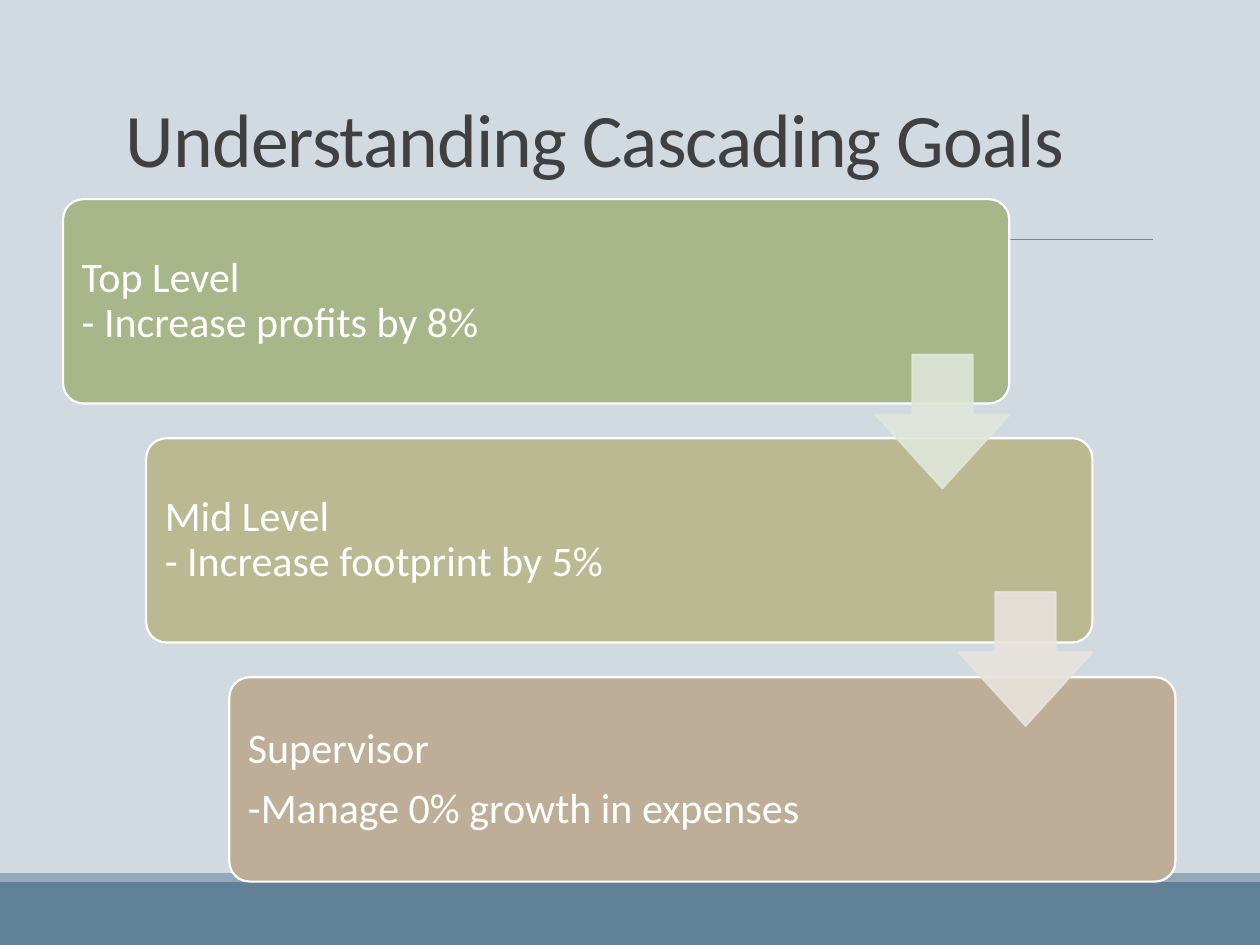
"""Build the cascading goals slide."""
from dataclasses import dataclass

from lxml import etree
from pptx import Presentation
from pptx.dml.color import RGBColor
from pptx.enum.shapes import MSO_CONNECTOR, MSO_SHAPE
from pptx.enum.text import MSO_ANCHOR
from pptx.oxml.ns import qn
from pptx.shapes.autoshape import Shape
from pptx.slide import Slide
from pptx.util import Pt

RECT = MSO_SHAPE.RECTANGLE
ROUND = MSO_SHAPE.ROUNDED_RECTANGLE
DOWN = MSO_SHAPE.DOWN_ARROW
LINE = MSO_CONNECTOR.STRAIGHT
MIDDLE = MSO_ANCHOR.MIDDLE
BOTTOM = MSO_ANCHOR.BOTTOM

PALE = RGBColor(0xD1, 0xD9, 0xE1)
BLUE = RGBColor(0x61, 0x81, 0x97)
MIST = RGBColor(0x92, 0xA9, 0xB9)
GRAY = RGBColor(0x80, 0x80, 0x80)
DARK = RGBColor(0x40, 0x40, 0x40)
WHITE = RGBColor(0xFF, 0xFF, 0xFF)
GREEN = RGBColor(0xA7, 0xB7, 0x89)
OLIVE = RGBColor(0xBA, 0xB9, 0x91)
TAN = RGBColor(0xBE, 0xAE, 0x98)
SAGE = RGBColor(0xE1, 0xE6, 0xDA)
SAND = RGBColor(0xE8, 0xE3, 0xDD)

FONT = "Calibri"
STEP = 47.5


@dataclass(frozen=True)
class Box:
    left: float
    top: float
    width: float
    height: float

    def shift(self, right: float, down: float) -> "Box":
        return Box(self.left + right, self.top + down, self.width, self.height)

    def points(self) -> tuple[Pt, Pt, Pt, Pt]:
        return Pt(self.left), Pt(self.top), Pt(self.width), Pt(self.height)


@dataclass(frozen=True)
class Style:
    size: float
    color: RGBColor
    anchor: MSO_ANCHOR
    lead: float
    after: float = 0
    track: int = 0


@dataclass(frozen=True)
class Goal:
    fill: RGBColor
    paras: tuple[tuple[str, ...], ...]
    width: float


CARD = Box(36, 113.8, 540.7, 116.8)
LABEL = Box(39.6, 117.3, 414, 110)
ARROW = Box(500.4, 202.7, 76.3, 76.3)
TITLE = Style(43.2, DARK, BOTTOM, 0.85, track=-50)
BODY = Style(24, WHITE, MIDDLE, 0.9, 8.4)

GOALS = (
    Goal(GREEN, (("Top Level", "- Increase profits by 8%"),), 414),
    Goal(OLIVE, (("Mid Level", "- Increase footprint by 5%"),), 409.7),
    Goal(TAN, (("Supervisor",), ("-Manage 0% growth in expenses",)), 409.7),
)


def add_form(slide: Slide, kind: MSO_SHAPE, box: Box, fill: RGBColor,
             edge: RGBColor | None = None, adjust: tuple[float, ...] = ()) -> Shape:
    form = slide.shapes.add_shape(kind, *box.points())
    form.shadow.inherit = False
    form.fill.solid()
    form.fill.fore_color.rgb = fill
    if edge is None:
        form.line.fill.background()
    else:
        form.line.color.rgb = edge
        form.line.width = Pt(1.25)
    for index, value in enumerate(adjust):
        form.adjustments[index] = value
    return form


def add_text(slide: Slide, box: Box, paras: tuple[tuple[str, ...], ...],
             style: Style, inset: tuple[float, float]) -> None:
    frame = slide.shapes.add_textbox(*box.points()).text_frame
    frame.word_wrap = True
    frame.vertical_anchor = style.anchor
    frame.margin_left = frame.margin_right = Pt(inset[0])
    frame.margin_top = frame.margin_bottom = Pt(inset[1])
    for index, lines in enumerate(paras):
        para = frame.add_paragraph() if index else frame.paragraphs[0]
        para.line_spacing = style.lead
        para.space_after = Pt(style.after)
        for row, words in enumerate(lines):
            if row:
                para.add_line_break()
            run = para.add_run()
            run.text = words
            run.font.name = FONT
            run.font.size = Pt(style.size)
            run.font.color.rgb = style.color
            if style.track:
                run.font._element.set("spc", str(style.track))


def add_rule(slide: Slide) -> None:
    rule = slide.shapes.add_connector(LINE, Pt(70.6), Pt(136.8), Pt(658.8), Pt(136.8))
    rule.line.color.rgb = GRAY
    rule.line.width = Pt(0.5)
    etree.SubElement(rule._element.spPr, qn("a:effectLst"))


def add_arrow(slide: Slide, box: Box, color: RGBColor) -> None:
    arrow = add_form(slide, DOWN, box, color, color)
    arrow.adjustments[0] = 0.45
    arrow.adjustments[1] = 0.55
    for tone in arrow._element.spPr.iter(qn("a:srgbClr")):
        etree.SubElement(tone, qn("a:alpha"), val="90000")


def main() -> None:
    deck = Presentation()
    deck.slide_width, deck.slide_height = Pt(720), Pt(540)
    slide = deck.slides.add_slide(deck.slide_layouts[6])
    slide.background.fill.solid()
    slide.background.fill.fore_color.rgb = PALE
    add_form(slide, RECT, Box(0, 504, 720, 36), BLUE)
    add_form(slide, RECT, Box(0, 499, 720, 5), MIST)
    add_rule(slide)
    add_text(slide, Box(64.8, 22.3, 594, 85.7),
             (("Understanding Cascading Goals",),), TITLE, (7.2, 3.6))
    for index, goal in enumerate(GOALS):
        right, down = index * STEP, index * 136.6
        add_form(slide, ROUND, CARD.shift(right, down), goal.fill, WHITE, (0.1,))
        spot = LABEL.shift(right, down)
        label = Box(spot.left, spot.top, goal.width, spot.height)
        add_text(slide, label, goal.paras, BODY, (7.2, 7.2))
    for index, color in enumerate((SAGE, SAND)):
        add_arrow(slide, ARROW.shift(index * STEP, index * 135.7), color)
    deck.save("out.pptx")


if __name__ == "__main__":
    main()
